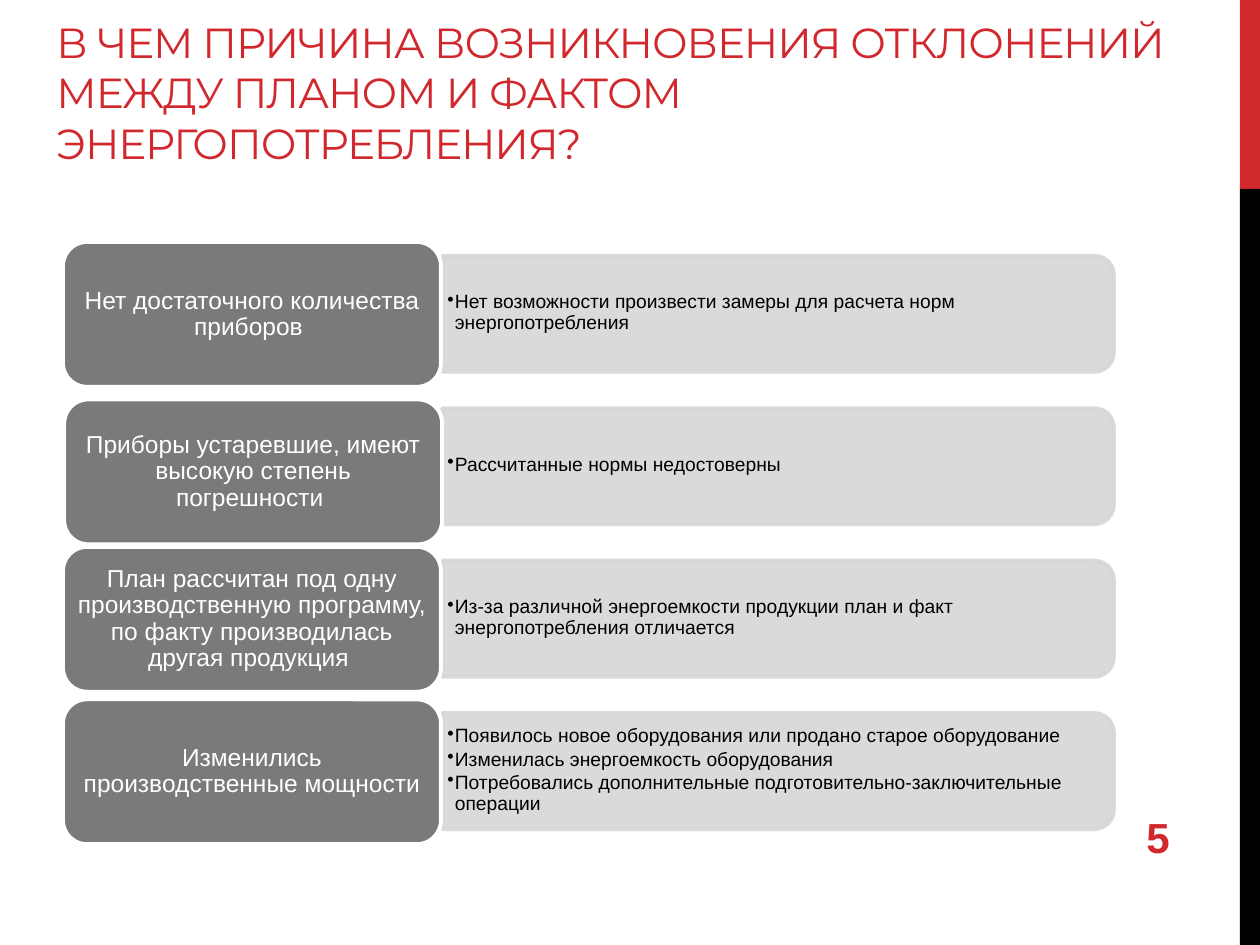
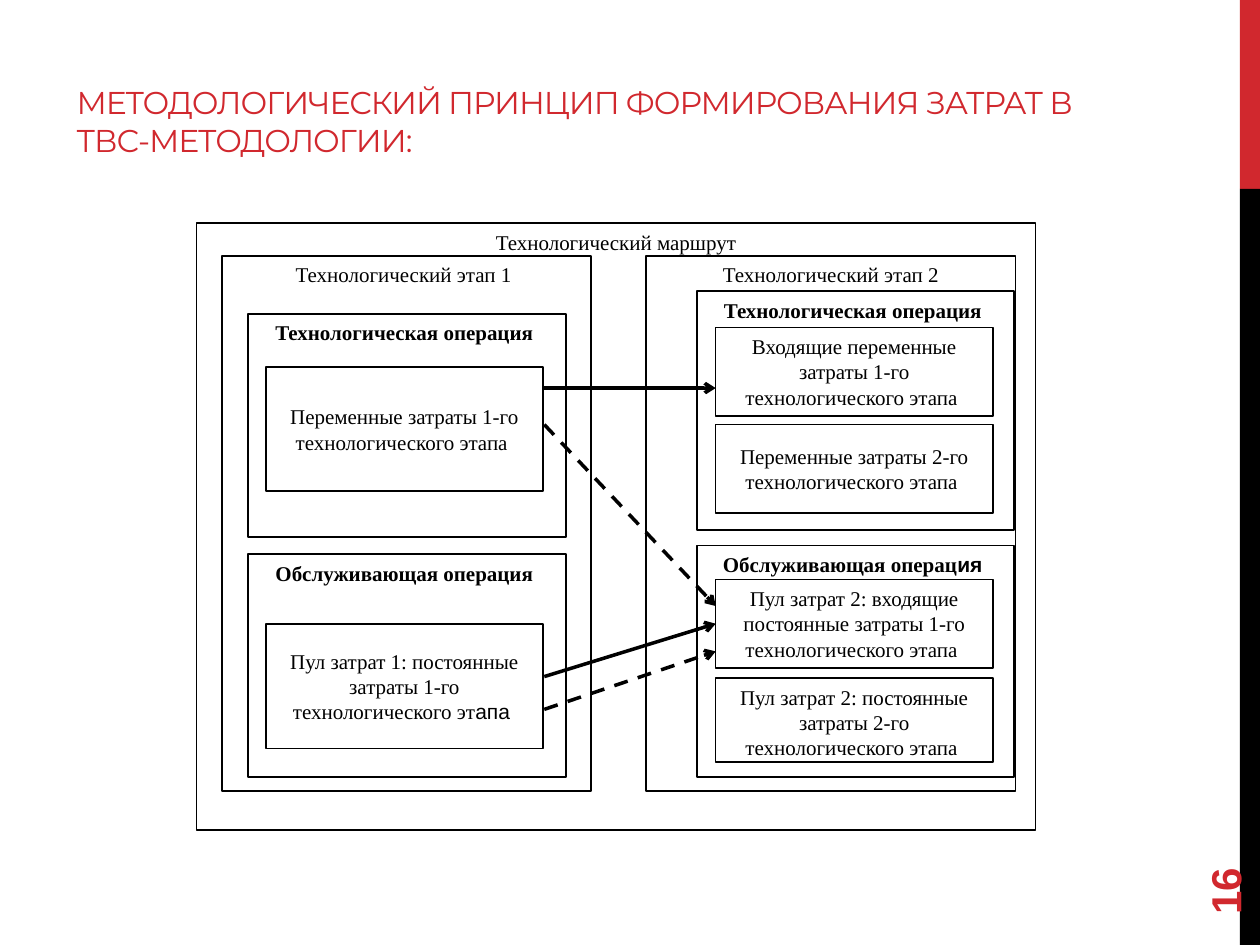
"""Builds two slides on energy use deviations and stage cost formation."""
from lxml import etree
from pptx import Presentation
from pptx import util as u
from pptx.dml.color import RGBColor
from pptx.enum import dml, shapes, text
from pptx.oxml import ns

RED = RGBColor(0xD1, 0x28, 0x2E)
BLACK = RGBColor(0, 0, 0)
WHITE = RGBColor(0xFF, 0xFF, 0xFF)
PANEL_GREY = RGBColor(0xD7, 0xD7, 0xD7)
CARD_GREY = RGBColor(0x7A, 0x7A, 0x7A)
SANS, SERIF, TITLE_FONT = "Arial", "Times New Roman", "Montserrat"
TOP, MIDDLE, BOTTOM = (text.MSO_ANCHOR.TOP, text.MSO_ANCHOR.MIDDLE,
                       text.MSO_ANCHOR.BOTTOM)
LEFT, CENTER = text.PP_ALIGN.LEFT, text.PP_ALIGN.CENTER
RECT = shapes.MSO_SHAPE.RECTANGLE

CAUSES = [
    ("Нет достаточного количества приборов ",
     ["Нет возможности произвести замеры для расчета норм энергопотребления"]),
    ("Приборы устаревшие, имеют высокую степень погрешности ",
     ["Рассчитанные нормы недостоверны"]),
    ("План рассчитан под одну производственную программу, "
     "по факту производилась другая продукция ",
     ["Из-за различной энергоемкости продукции план и факт "
      "энергопотребления отличается"]),
    ("Изменились производственные мощности",
     ["Появилось новое оборудования или продано старое оборудование",
      "Изменилась энергоемкость оборудования",
      "Потребовались дополнительные подготовительно-заключительные операции"]),
]
CAUSE_PITCH = 1.21
CARD_NUDGES = {1: (0.01, 0.04)}

STAGE_WIDTH, OPERATION_WIDTH, COST_WIDTH = 2.93, 2.52, 2.2


def apply_format(target, values):
    """Set every attribute named in values on target."""
    for name, value in values.items():
        setattr(target, name, value)


def inches(*values):
    """Turn plain numbers into lengths."""
    return [u.Inches(value) for value in values]


def set_margins(frame, horizontal, vertical):
    """Set equal side margins and equal top and bottom margins."""
    side, end = inches(horizontal, vertical)
    apply_format(frame, {"margin_left": side, "margin_right": side,
                         "margin_top": end, "margin_bottom": end})


def write_paragraph(paragraph, runs, size, color, bold=False, **layout):
    """Fill a paragraph with (wording, font name) runs."""
    apply_format(paragraph, layout)
    for wording, font_name in runs:
        run = paragraph.add_run()
        run.text = wording
        apply_format(run.font, {"name": font_name, "size": u.Pt(size), "bold": bold})
        run.font.color.rgb = color
    return paragraph


def add_text_box(slide, box, anchor):
    """Add a wrapping text box."""
    shape = slide.shapes.add_textbox(*inches(*box))
    apply_format(shape.text_frame, {"word_wrap": True, "vertical_anchor": anchor})
    return shape


def add_block(slide, kind, box, fill, line=None, line_width=1, anchor=TOP):
    """Add a filled preset shape without shadow."""
    shape = slide.shapes.add_shape(kind, *inches(*box))
    shape.shadow.inherit = False
    shape.fill.solid()
    shape.fill.fore_color.rgb = fill
    if line is None:
        shape.line.fill.background()
    else:
        shape.line.color.rgb = line
        shape.line.width = u.Pt(line_width)
    apply_format(shape.text_frame, {"word_wrap": True, "vertical_anchor": anchor})
    return shape


def add_base_slide(presentation, title, title_box, title_size):
    """Add a blank slide with the side band and the title."""
    slide = presentation.slides.add_slide(presentation.slide_layouts[6])
    add_block(slide, RECT, (9.84, 0, 0.16, 1.5), RED)
    add_block(slide, RECT, (9.84, 1.5, 0.16, 6), BLACK)
    shape = add_text_box(slide, title_box, BOTTOM)
    paragraph = write_paragraph(shape.text_frame.paragraphs[0],
                                [(title, TITLE_FONT)], title_size, RED)
    for run in paragraph.runs:
        run.font._element.set("spc", "-60")
    return slide


def add_page_number(slide, number, width, rotation=0):
    """Add the large red page number."""
    shape = add_text_box(slide, (9, 6.44, width, 0.4), MIDDLE)
    shape.rotation = rotation
    write_paragraph(shape.text_frame.paragraphs[0], [(number, SANS)], 24, RED, True)


def add_bullet(paragraph):
    """Give a paragraph a hanging round bullet."""
    properties = paragraph._p.get_or_add_pPr()
    hang = u.Inches(0.06)
    properties.set("marL", str(hang))
    properties.set("indent", str(-hang))
    etree.SubElement(properties, ns.qn("a:buChar")).set("char", "•")


def add_cause_panel(slide, top, effects):
    """Add the pale panel, rounded on the right, with its bulleted effects."""
    width, height = 5.33, 0.92
    center_x, center_y = 3.51 + width / 2, top + height / 2
    panel = add_block(slide, shapes.MSO_SHAPE.ROUND_2_SAME_RECTANGLE,
                      (center_x - height / 2, center_y - width / 2, height, width),
                      PANEL_GREY, PANEL_GREY, 2.25)
    panel.rotation = 90
    for color in panel._element.spPr.iter(ns.qn("a:srgbClr")):
        etree.SubElement(color, ns.qn("a:alpha")).set("val", "90000")
    frame = add_text_box(slide, (3.5, top + 0.04, 5.29, 0.83), MIDDLE).text_frame
    set_margins(frame, 0.05, 0.02)
    for index, effect in enumerate(effects):
        paragraph = frame.add_paragraph() if index else frame.paragraphs[0]
        write_paragraph(paragraph, [(effect, SANS)], 11, BLACK, alignment=LEFT,
                        line_spacing=0.9, space_after=u.Pt(1.5))
        add_bullet(paragraph)


def add_cause_card(slide, left, top, cause):
    """Add the dark card that names a cause."""
    card = add_block(slide, shapes.MSO_SHAPE.ROUNDED_RECTANGLE, (left, top, 3, 1.15),
                     CARD_GREY, WHITE, 2.25, MIDDLE)
    set_margins(card.text_frame, 0.06, 0.03)
    write_paragraph(card.text_frame.paragraphs[0], [(cause, SANS)], 14, WHITE,
                    alignment=CENTER, line_spacing=0.9)


def add_frame(slide, box, wording, bold=False, anchor=TOP, sans_ending=""):
    """Add an outlined white box with centred serif wording."""
    shape = add_block(slide, RECT, box, WHITE, BLACK, 1, anchor)
    runs = [(wording, SERIF)] + ([(sans_ending, SANS)] if sans_ending else [])
    write_paragraph(shape.text_frame.paragraphs[0], runs, 12, BLACK, bold,
                    alignment=CENTER)
    return shape


def add_arrow(slide, start_y, end_y, dashed=False, target=None):
    """Add an arrow from the first stage costs to the second stage costs."""
    arrow = slide.shapes.add_connector(shapes.MSO_CONNECTOR.STRAIGHT,
                                       *inches(4.32, start_y, 5.68, end_y))
    if target is not None:
        arrow.end_connect(target, 1)
    arrow.line.color.rgb = BLACK
    arrow.line.width = u.Pt(2)
    if dashed:
        arrow.line.dash_style = dml.MSO_LINE.DASH
    outline = arrow.line._get_or_add_ln()
    etree.SubElement(outline, ns.qn("a:tailEnd")).set("type", "arrow")
    etree.SubElement(arrow._element.spPr, ns.qn("a:effectLst"))


def build_causes_slide(presentation):
    """Build the slide on causes of deviations."""
    slide = add_base_slide(
        presentation,
        "В ЧЕМ ПРИЧИНА ВОЗНИКНОВЕНИЯ ОТКЛОНЕНИЙ МЕЖДУ ПЛАНОМ И ФАКТОМ "
        "ЭНЕРГОПОТРЕБЛЕНИЯ?", (0.35, 0, 9.07, 1.38), 24)
    add_page_number(slide, "5", 0.57)
    for index, (cause, effects) in enumerate(CAUSES):
        offset = index * CAUSE_PITCH
        shift_x, shift_y = CARD_NUDGES.get(index, (0, 0))
        add_cause_panel(slide, 2.03 + offset, effects)
        add_cause_card(slide, 0.5 + shift_x, 1.92 + offset + shift_y, cause)


def add_first_stage(slide):
    """Add the first stage with its operations and costs."""
    add_frame(slide, (1.76, 2.03, STAGE_WIDTH, 4.25), "Технологический этап 1 ")
    add_frame(slide, (1.97, 2.49, OPERATION_WIDTH, 1.77),
              "Технологическая операция ", bold=True)
    add_frame(slide, (1.97, 4.4, OPERATION_WIDTH, 1.77),
              "Обслуживающая операция ", bold=True)
    add_frame(slide, (2.11, 2.91, COST_WIDTH, 0.99),
              "Переменные затраты 1-го технологического этапа ", anchor=MIDDLE)
    add_frame(slide, (2.11, 4.95, COST_WIDTH, 0.99),
              "Пул затрат 1: постоянные затраты 1-го технологического эт",
              anchor=MIDDLE, sans_ending="апа ")


def add_second_stage(slide):
    """Add the second stage and return its pool of incoming fixed costs."""
    add_frame(slide, (5.13, 2.03, STAGE_WIDTH, 4.25), "Технологический этап 2")
    add_frame(slide, (5.53, 2.31, OPERATION_WIDTH, 1.9),
              "Технологическая операция ", bold=True)
    add_frame(slide, (5.53, 4.33, OPERATION_WIDTH, 1.84),
              "Обслуживающая операц", bold=True, sans_ending="ия ")
    add_frame(slide, (5.68, 2.6, COST_WIDTH, 0.7),
              "Входящие переменные затраты 1-го технологического этапа ")
    add_frame(slide, (5.68, 3.37, COST_WIDTH, 0.7),
              "Переменные затраты 2-го технологического этапа ", anchor=MIDDLE)
    add_frame(slide, (5.68, 5.38, COST_WIDTH, 0.67),
              "Пул затрат 2: постоянные затраты 2-го технологического этапа ")
    return add_frame(
        slide, (5.68, 4.6, COST_WIDTH, 0.7),
        "Пул затрат 2: входящие постоянные затраты 1-го технологического этапа ")


def build_route_slide(presentation):
    """Build the slide on cost formation along the route."""
    slide = add_base_slide(
        presentation,
        "МЕТОДОЛОГИЧЕСКИЙ ПРИНЦИП ФОРМИРОВАНИЯ ЗАТРАТ В ТВС-МЕТОДОЛОГИИ:",
        (0.51, 0.13, 8.66, 1.18), 18)
    add_page_number(slide, "16", 1.44, 270)
    add_frame(slide, (1.56, 1.77, 6.66, 4.82), "Технологический маршрут")
    add_first_stage(slide)
    incoming_pool = add_second_stage(slide)
    add_arrow(slide, 3.08, 3.08)
    add_arrow(slide, 5.37, 4.95, target=incoming_pool)
    add_arrow(slide, 5.63, 5.17, dashed=True)
    add_arrow(slide, 3.37, 4.81, dashed=True)


def main():
    """Create and save the presentation."""
    presentation = Presentation()
    apply_format(presentation, {"slide_width": u.Inches(10),
                                "slide_height": u.Inches(7.5)})
    build_causes_slide(presentation)
    build_route_slide(presentation)
    presentation.save("out.pptx")


if __name__ == "__main__":
    main()
